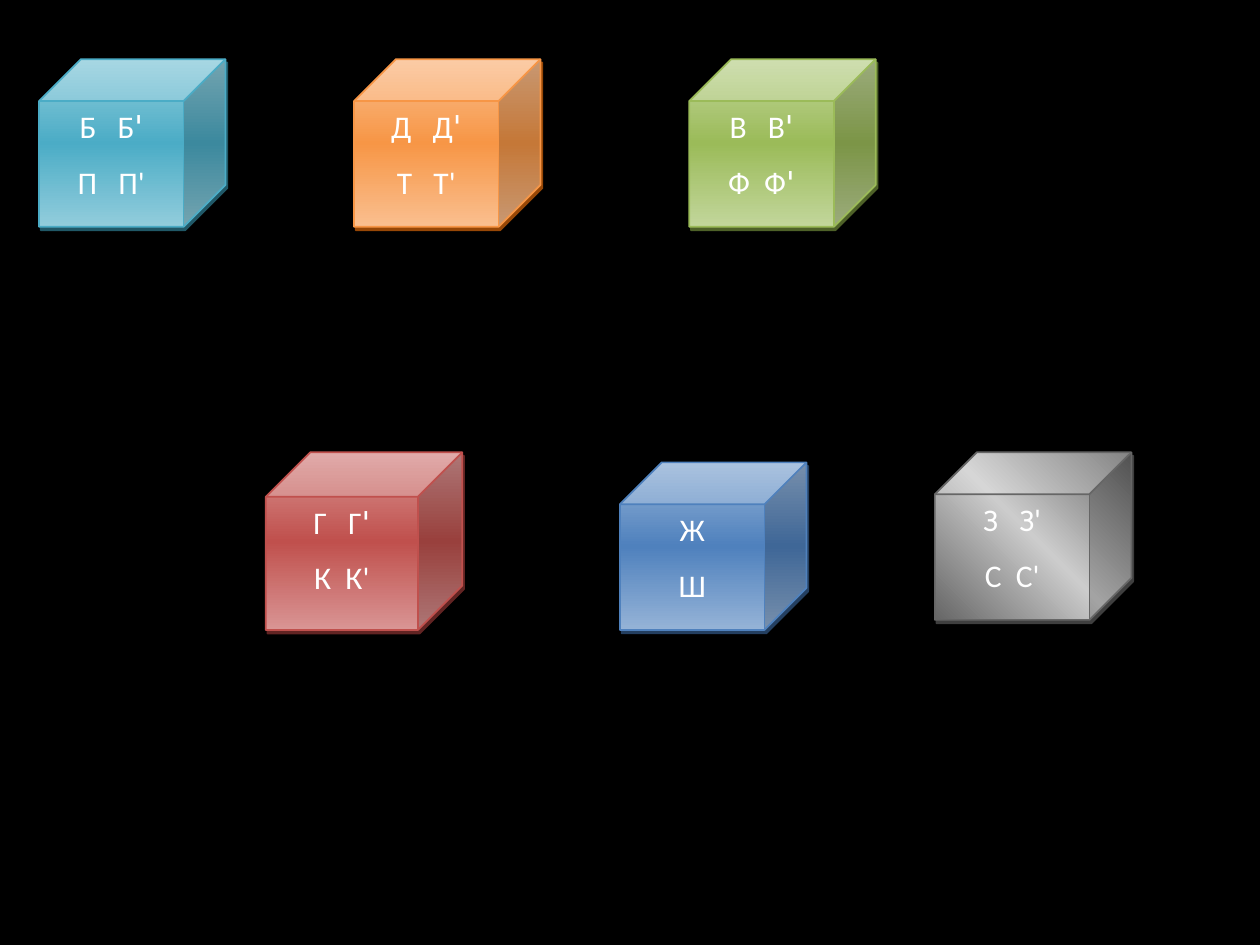
from copy import deepcopy

from lxml.etree import SubElement
from pptx import Presentation
from pptx.dml.color import RGBColor
from pptx.enum.shapes import MSO_SHAPE as SHAPE
from pptx.enum.text import MSO_ANCHOR as ANCHOR, PP_ALIGN as ALIGN
from pptx.oxml.ns import qn
from pptx.util import Inches, Pt

WIDE, NARROW = 8, 4
MARK = "'"


def rgb(value):
    return RGBColor.from_string(value)


class SlideBuilder:
    font = "Calibri"
    mark_font = "DejaVu Sans"
    text_size = 18
    text_color = "FFFFFF"

    def __init__(self, prs, background):
        self.slide = prs.slides.add_slide(prs.slide_layouts[6])
        fill = self.slide.background.fill
        fill.solid()
        fill.fore_color.rgb = rgb(background)

    def gradient(self, sp, colors, angle):
        sp.fill.gradient()
        sp.fill.gradient_angle = angle
        stops = sp._element.spPr.find(f".//{qn('a:gsLst')}")
        stops.append(deepcopy(stops[0]))
        for stop, color, position in zip(sp.fill.gradient_stops, colors, (0, 0.5, 1)):
            stop.color.rgb = rgb(color)
            stop.position = position

    def shadow(self, sp, color, opacity):
        sp.shadow.inherit = False
        effects = sp._element.spPr.find(qn("a:effectLst"))
        outer = SubElement(effects, qn("a:outerShdw"), dist=str(Pt(2.2)),
                           dir=str(63 * 60000), algn="ctr", rotWithShape="0")
        clr = SubElement(outer, qn("a:srgbClr"), val=color)
        SubElement(clr, qn("a:alpha"), val=str(opacity * 1000))

    def letters(self, p, parts):
        p.alignment = ALIGN.CENTER
        p.space_after = Pt(10)
        for part in parts:
            r = p.add_run()
            if part in (WIDE, NARROW):
                r.text = " "
                r._r.get_or_add_rPr().set("spc", str(part * 100))
            else:
                r.text = part
            r.font.name = self.mark_font if part == MARK else self.font
            r.font.size = Pt(self.text_size)
            r.font.color.rgb = rgb(self.text_color)

    def cube(self, box, edge, middle, line, shadow, rows, angle=270, opacity=100):
        sp = self.slide.shapes.add_shape(SHAPE.CUBE, *map(Inches, box))
        sp.adjustments[0] = 0.25
        self.gradient(sp, (edge, middle, edge), angle)
        sp.line.color.rgb = rgb(line)
        sp.line.width = Pt(1)
        self.shadow(sp, shadow, opacity)
        tf = sp.text_frame
        tf.word_wrap = True
        tf.vertical_anchor = ANCHOR.TOP
        voiced, voiceless = rows
        self.letters(tf.paragraphs[0], voiced)
        self.letters(tf.add_paragraph(), voiceless)


def main():
    prs = Presentation()
    prs.slide_width, prs.slide_height = Inches(10), Inches(7.5)
    builder = SlideBuilder(prs, "000000")
    width, height = 1.48, 1.33
    top = 0.47

    builder.cube((0.31, top, width, height), "92CDDC", "4BACC6", "4BACC6", "205867",
                 (("Б", WIDE, "Б", MARK), ("П", WIDE, "П'")))
    builder.cube((2.81, top, width, height), "FABF8F", "F79646", "F79646", "974706",
                 (("Д", WIDE, "Д", MARK), ("Т", WIDE, "Т'")))
    builder.cube((5.47, top, width, height), "C2D69B", "9BBB59", "9BBB59", "4E6128",
                 (("В", WIDE, "В", MARK), ("Ф", NARROW, "Ф", MARK)))
    builder.cube((2.11, 3.59, 1.56, 1.41), "D99594", "C0504D", "C0504D", "622423",
                 (("Г", WIDE, "Г", MARK), ("К", NARROW, "К'")))
    builder.cube((4.92, 3.67, width, height), "95B3D7", "4F81BD", "4F81BD", "243F60",
                 (("Ж",), ("Ш",)))
    builder.cube((7.42, 3.59, 1.56, height), "666666", "CCCCCC", "666666", "7F7F7F",
                 (("З", WIDE, "З'"), ("С", NARROW, "С'")), angle=45, opacity=50)

    prs.save("out.pptx")


if __name__ == "__main__":
    main()
